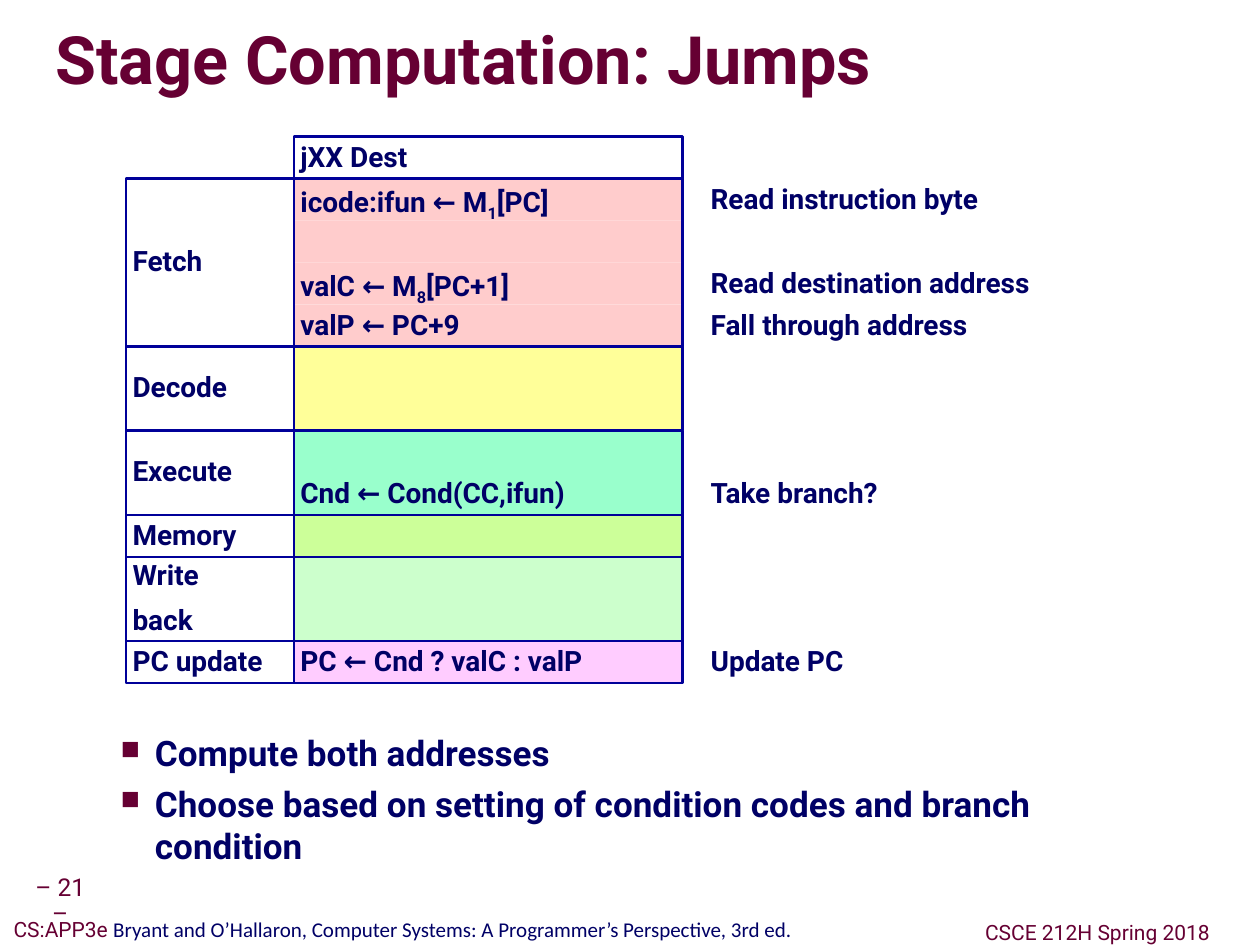
from lxml import etree
from pptx import Presentation
from pptx.dml.color import RGBColor
from pptx.enum.shapes import MSO_SHAPE
from pptx.enum.text import MSO_ANCHOR, PP_ALIGN
from pptx.oxml import parse_xml
from pptx.oxml.ns import nsdecls, qn
from pptx.util import Cm, Pt

MAROON = RGBColor(0x66, 0x00, 0x33)
NAVY = RGBColor(0x00, 0x00, 0x66)
BORDER = RGBColor(0x00, 0x00, 0x99)
PINK = RGBColor(0xFF, 0xCC, 0xCC)
YELLOW = RGBColor(0xFF, 0xFF, 0x99)
MINT = RGBColor(0x99, 0xFF, 0xCC)
LIME = RGBColor(0xCC, 0xFF, 0x99)
PALE_GREEN = RGBColor(0xCC, 0xFF, 0xCC)
LILAC = RGBColor(0xFF, 0xCC, 0xFF)

TOP, ROW = Cm(2.75), Cm(11) // 13
STAGE_X, STAGE_W = Cm(2.54), Cm(3.38)
STEP_X, STEP_W = Cm(5.92), Cm(7.82)
NOTE_X = Cm(14.18)

prs = Presentation()
prs.slide_width, prs.slide_height = Cm(25.37), Cm(19.02)
s = prs.slides.add_slide(prs.slide_layouts[6])


def write(sp, paragraphs, size=16, color=NAVY, bold=True, spacing=0.9,
          anchor=MSO_ANCHOR.TOP, align=PP_ALIGN.LEFT, inset=Cm(0.13), wrap=True):
    """Fill sp with paragraphs; in each, text between underscores is subscript."""
    tf = sp.text_frame
    tf.word_wrap, tf.vertical_anchor = wrap, anchor
    tf.margin_left = tf.margin_right = tf.margin_top = tf.margin_bottom = inset
    for i, text in enumerate(paragraphs):
        p = tf.paragraphs[0] if i == 0 else tf.add_paragraph()
        p.alignment, p.line_spacing = align, spacing
        p.space_before = Pt(size / 2 if i else 0)
        p.font.name, p.font.size, p.font.bold = "Roboto", Pt(size), bold
        p.font.color.rgb = color
        for j, part in enumerate(text.split("_")):
            r = p.add_run()
            r.text = part
            if j % 2:
                r.font._element.set("baseline", "-25000")
    return tf


def add_cell(x, y, w, h, fill=None, border=True):
    sp = s.shapes.add_shape(MSO_SHAPE.RECTANGLE, x, y, w, h)
    sp.shadow.inherit = False
    if fill:
        sp.fill.solid()
        sp.fill.fore_color.rgb = fill
    else:
        sp.fill.background()
    if border:
        sp.line.color.rgb = BORDER
        sp.line.width = Pt(1.5)
    else:
        sp.line.fill.background()
    return sp


# Footer
number = s.shapes.add_textbox(Cm(0.58), Cm(17.75), Cm(1.27), Cm(0.8))
write(number, ["– 21 –"], 14, MAROON, False, anchor=MSO_ANCHOR.MIDDLE, align=PP_ALIGN.CENTER)
book = s.shapes.add_textbox(0, Cm(18.39), Cm(16.23), Cm(0.7))
tf = write(book, ["CS:APP3e "], 12, MAROON, False, anchor=MSO_ANCHOR.MIDDLE,
           align=PP_ALIGN.CENTER, wrap=False)
r = tf.paragraphs[0].add_run()
r.text = "Bryant and O’Hallaron, Computer Systems: A Programmer’s Perspective, 3rd ed."
r.font.name = "Calibri"
r.font.color.rgb = NAVY
course = s.shapes.add_textbox(Cm(19.6), Cm(18.45), Cm(5), Cm(0.7))
write(course, ["CSCE 212H Spring 2018"], 12, MAROON, False, anchor=MSO_ANCHOR.MIDDLE,
      align=PP_ALIGN.CENTER, wrap=False)

# Title with text shadow
title = s.shapes.add_textbox(Cm(1.12), Cm(0.2), Cm(24.18), Cm(2.16))
tf = write(title, ["Stage Computation: Jumps"], 38, MAROON, spacing=0.87,
           anchor=MSO_ANCHOR.MIDDLE, inset=0)
tf.paragraphs[0].runs[0].font._element.append(parse_xml(
    f'<a:effectLst {nsdecls("a")}><a:outerShdw dist="53882" dir="2700000">'
    '<a:srgbClr val="969696"/></a:outerShdw></a:effectLst>'))

# Conclusions
body = s.shapes.add_textbox(Cm(0.81), Cm(14.6), Cm(23.04), Cm(3.25))
tf = write(body, ["Compute both addresses",
                  "Choose based on setting of condition codes and branch condition"],
           20, spacing=1.0)
tf.margin_left = tf.margin_right = Cm(0.25)
for p in tf.paragraphs:
    p.space_before = Pt(5)
    pPr = p._p.get_or_add_pPr()
    pPr.set("marL", str(Cm(2.06)))
    pPr.set("indent", str(-Cm(0.69)))
    bullet = [parse_xml(f'<a:buClr {nsdecls("a")}><a:srgbClr val="{MAROON}"/></a:buClr>'),
              parse_xml(f'<a:buSzPct {nsdecls("a")} val="75000"/>'),
              parse_xml(f'<a:buChar {nsdecls("a")} char="■"/>')]
    defaults = pPr.find(qn("a:defRPr"))
    for element in bullet:
        defaults.addprevious(element)

# Stages: label lines, colour, one (step, note) pair per row
stages = [
    (["Fetch"], PINK, [("icode:ifun ← M_1_[PC]", "Read instruction byte"), ("", ""),
                       ("valC ← M_8_[PC+1]", "Read destination address"),
                       ("valP ← PC+9", "Fall through address")]),
    (["Decode"], YELLOW, [("", ""), ("", "")]),
    (["Execute"], MINT, [("", ""), ("Cnd ← Cond(CC,ifun)", "Take branch?")]),
    (["Memory"], LIME, [("", "")]),
    (["Write", "back"], PALE_GREEN, [("", ""), ("", "")]),
    (["PC update"], LILAC, [("PC ← Cnd ? valC : valP", "Update PC")]),
]

write(add_cell(STEP_X, TOP, STEP_W, ROW), ["jXX Dest"])
y = TOP + ROW
for label, color, rows in stages:
    height = ROW * len(rows)
    for i, (step, note) in enumerate(rows):
        row_y = y + i * ROW
        cell = add_cell(STEP_X, row_y, STEP_W, ROW, color, border=len(rows) == 1)
        if step:
            write(cell, [step])
        if note:
            write(s.shapes.add_textbox(NOTE_X, row_y, STEP_W, ROW), [note])
    if len(rows) > 1:
        add_cell(STEP_X, y, STEP_W, height)
    write(add_cell(STAGE_X, y, STAGE_W, height), label, anchor=MSO_ANCHOR.MIDDLE)
    y += height

prs.save("out.pptx")
